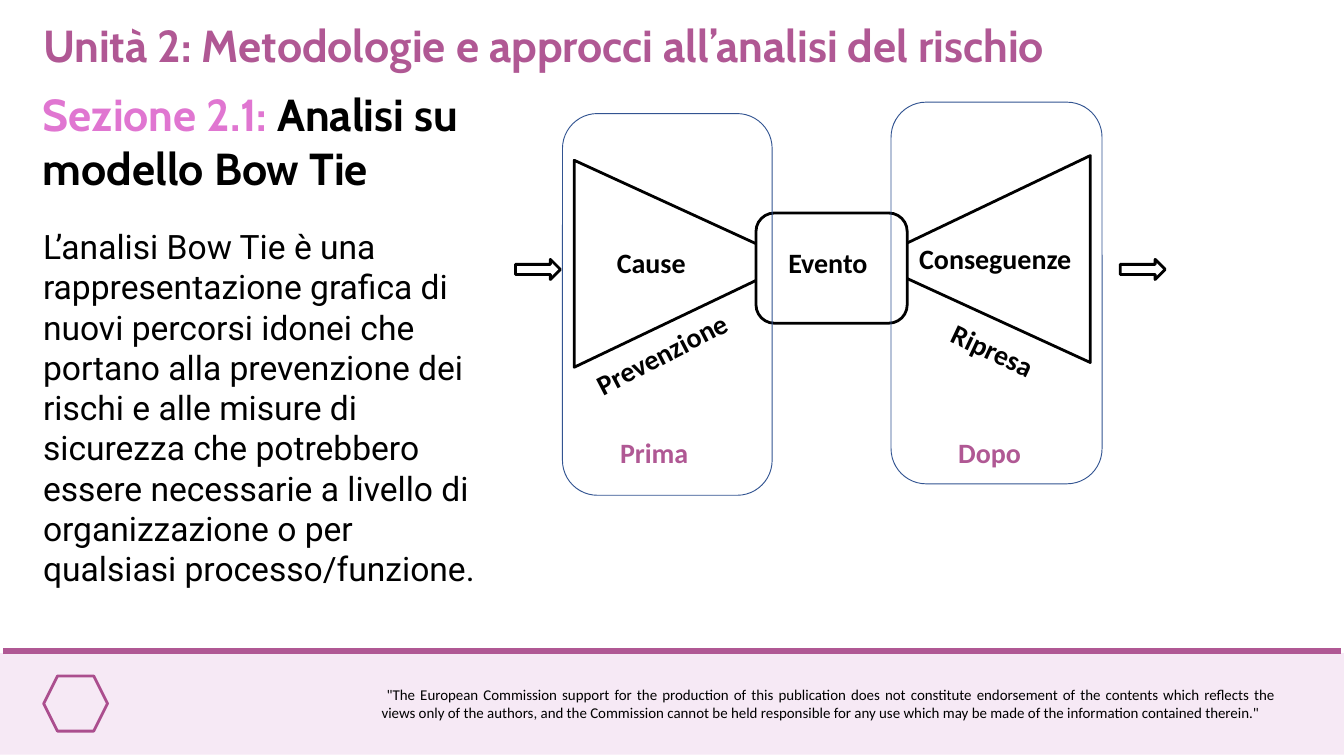
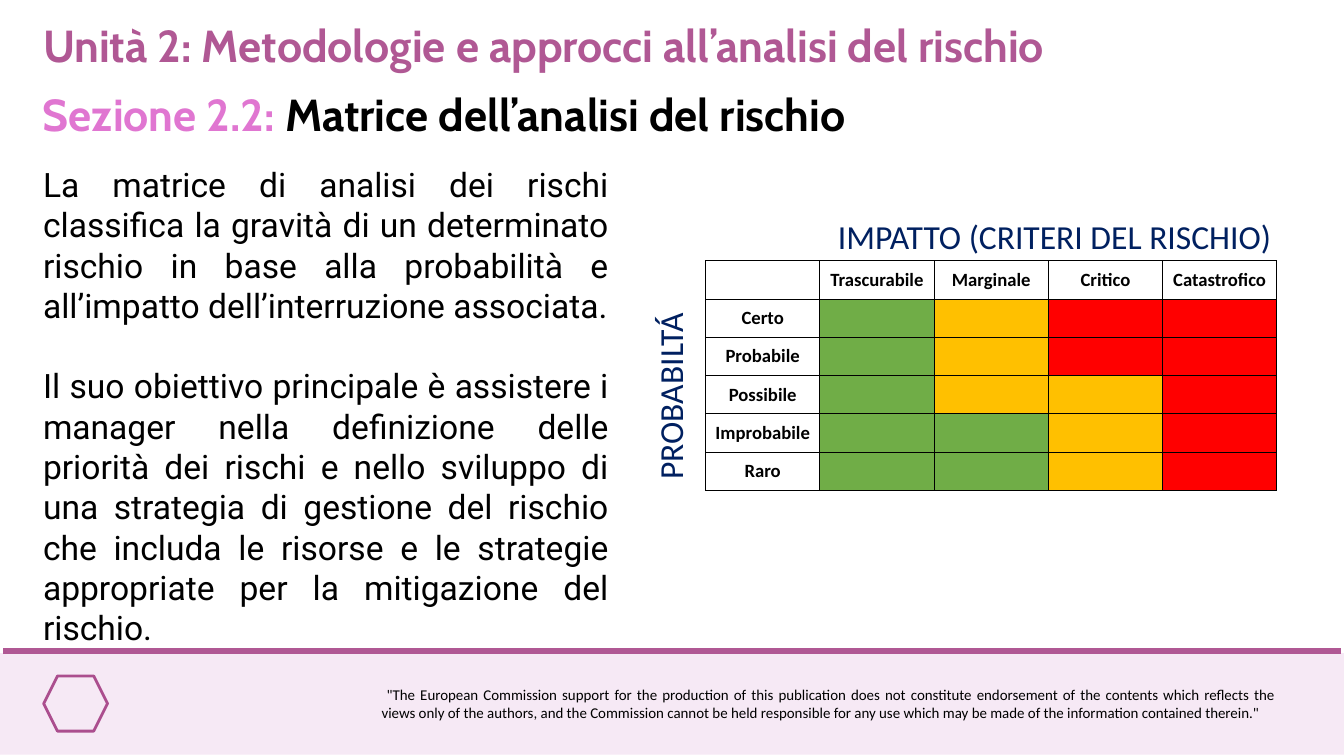
import pptx
import pptx.dml.color
import pptx.enum.shapes
import pptx.enum.text
import pptx.oxml
import pptx.oxml.ns
import pptx.util

PX = 9144  # EMU in one px, 100 px to the inch

COLORS = {
    "plum": "B05894", "pink": "E076D1", "band": "F6E9F5", "emblem": "AB4E8E",
    "black": "000000", "white": "FFFFFF", "frame": "325491", "navy": "002060",
    "low": "70AD47", "medium": "FFC000", "high": "FF0000",
}
UNIT = "Unità 2: Metodologie e approcci all’analisi del rischio"
DISCLAIMER = (
    " \"The European Commission support for the production of this publication "
    "does not constitute endorsement of the contents which reflects the views only "
    "of the authors, and the Commission cannot be held responsible for any use "
    "which may be made of the information contained therein.\""
)

SHAPE = pptx.enum.shapes.MSO_SHAPE
ALIGN = pptx.enum.text.PP_ALIGN
ANCHOR = pptx.enum.text.MSO_ANCHOR


def rgb(name):
    return pptx.dml.color.RGBColor.from_string(COLORS[name])


def sub(parent, tag, **attrs):
    el = pptx.oxml.parse_xml(f"<{tag} {pptx.oxml.ns.nsdecls('a')}/>")
    for key, value in attrs.items():
        el.set(key, str(value))
    parent.append(el)
    return el


class Deck:
    def __init__(self):
        self.prs = pptx.Presentation()
        self.prs.slide_width = 2000 * PX
        self.prs.slide_height = 1125 * PX
        self.s = None

    def place(self, sp, box, rot=0):
        sp.left, sp.top, sp.width, sp.height = (v * PX for v in box)
        if rot:
            sp.rotation = rot

    def run(self, p, text, size, font="Calibri", color="black", bold=False):
        r = p.add_run()
        r.text = text
        r.font.size = pptx.util.Pt(size)
        r.font.name = font
        r.font.bold = bold
        r.font.color.rgb = rgb(color)

    def frame(self, sp):
        tf = sp.text_frame
        tf.word_wrap = True
        tf.auto_size = pptx.enum.text.MSO_AUTO_SIZE.NONE
        tf.vertical_anchor = ANCHOR.TOP
        return tf

    # Slide with title, section heading and footer
    def slide(self, number, section, heading_box):
        self.s = self.prs.slides.add_slide(self.prs.slide_layouts[1])
        self.footer()
        title = self.s.shapes.title
        self.place(title, (54, 22, 1758, 91))
        p = self.frame(title).paragraphs[0]
        p.alignment = ALIGN.LEFT
        self.run(p, UNIT, 48, "Cabin", "plum", True)
        p = self.text(heading_box, f"Sezione {number}: ", 48, font="Cabin", color="pink", bold=True)
        self.run(p, section, 48, "Cabin", "black", True)

    def footer(self):
        self.shape(SHAPE.RECTANGLE, (0, 972, 2000, 151), fill="band")
        rule = self.s.shapes.add_connector(
            pptx.enum.shapes.MSO_CONNECTOR.STRAIGHT, 5 * PX, 969 * PX, 1995 * PX, 969 * PX)
        rule.line.color.rgb = rgb("plum")
        rule.line.width = pptx.util.Pt(6.75)
        sub(rule._element.spPr, "a:effectLst")
        self.shape(SHAPE.HEXAGON, (65, 1006, 95, 82), line="emblem", width=3)
        self.text((558, 1015, 1350, 64), DISCLAIMER, 16, align=ALIGN.JUSTIFY)

    def body(self, box, paragraphs, align=ALIGN.LEFT):
        sp = self.s.placeholders[1]
        self.place(sp, box)
        tf = self.frame(sp)
        for i, text in enumerate(paragraphs):
            p = tf.add_paragraph() if i else tf.paragraphs[0]
            pPr = p._p.get_or_add_pPr()
            pPr.set("marL", "0")
            pPr.set("indent", "0")
            sub(pPr, "a:buNone")
            p.alignment = align
            p.space_before = pptx.util.Pt(43 if i else 0)
            self.run(p, text, 36, "Roboto")

    def text(self, box, text, size, align=ALIGN.LEFT, rot=0, **style):
        sp = self.s.shapes.add_textbox(0, 0, 0, 0)
        self.place(sp, box, rot)
        p = self.frame(sp).paragraphs[0]
        p.alignment = align
        self.run(p, text, size, **style)
        return p

    def shape(self, kind, box, fill=None, line=None, width=1, rot=0):
        sp = self.s.shapes.add_shape(kind, 0, 0, 0, 0)
        self.place(sp, box, rot)
        sp.shadow.inherit = False
        if fill:
            sp.fill.solid()
            sp.fill.fore_color.rgb = rgb(fill)
        else:
            sp.fill.background()
        if line:
            sp.line.color.rgb = rgb(line)
            sp.line.width = pptx.util.Pt(width)
        else:
            sp.line.fill.background()
        return sp

    def cell(self, cell, text="", fill="white"):
        tcPr = cell._tc.get_or_add_tcPr()
        for side in ("lnL", "lnR", "lnT", "lnB"):
            ln = sub(tcPr, f"a:{side}", w=12700)
            sub(sub(ln, "a:solidFill"), "a:srgbClr", val=COLORS["black"])
        cell.fill.solid()
        cell.fill.fore_color.rgb = rgb(fill)
        cell.vertical_anchor = ANCHOR.MIDDLE
        if text:
            p = cell.text_frame.paragraphs[0]
            p.alignment = ALIGN.CENTER
            self.run(p, text, 20, bold=True)

    def matrix(self, left, top, col_width, row_height, impacts, levels):
        rows, cols = len(levels) + 1, len(impacts) + 1
        table = self.s.shapes.add_table(
            rows, cols, left * PX, top * PX,
            cols * col_width * PX, rows * row_height * PX).table
        table.first_row = table.horz_banding = False
        for col in table.columns:
            col.width = col_width * PX
        for row in table.rows:
            row.height = row_height * PX
        for c, impact in enumerate([""] + impacts):
            self.cell(table.cell(0, c), impact)
        grades = {"L": "low", "M": "medium", "H": "high"}
        for r, (name, risks) in enumerate(levels.items(), 1):
            self.cell(table.cell(r, 0), name)
            for c, risk in enumerate(risks, 1):
                self.cell(table.cell(r, c), fill=grades[risk])


def bow_tie(deck):
    deck.slide("2.1", "Analisi su modello Bow Tie", (54, 124, 804, 172))
    deck.body((54, 331, 668, 555), [
        "L’analisi Bow Tie è una rappresentazione grafica di nuovi percorsi idonei "
        "che portano alla prevenzione dei rischi e alle misure di sicurezza che "
        "potrebbero essere necessarie a livello di organizzazione o per qualsiasi "
        "processo/funzione."])

    # Bow tie and arrows
    solid = dict(fill="white", line="black", width=3)
    for left, top, rot in ((865, 228, 90), (1304, 221, 270)):
        wing = deck.shape(SHAPE.ISOSCELES_TRIANGLE, (left, top, 308, 329), rot=rot, **solid)
        wing.adjustments[0] = 0.49
    deck.shape(SHAPE.ROUNDED_RECTANGLE, (1125, 317, 225, 164), **solid)
    for left in (767, 1667):
        deck.shape(SHAPE.RIGHT_ARROW, (left, 386, 67, 30), **solid)

    # Labels
    for text, box, align, rot, color in (
        ("Cause", (908, 360, 158, 61), ALIGN.LEFT, 0, "black"),
        ("Conseguenze", (1358, 355, 299, 61), ALIGN.LEFT, 0, "black"),
        ("Evento", (1153, 360, 158, 61), ALIGN.CENTER, 0, "black"),
        ("Prevenzione", (855, 496, 259, 61), ALIGN.CENTER, 332.6, "black"),
        ("Ripresa", (1369, 491, 216, 61), ALIGN.CENTER, 25.2, "black"),
        ("Prima", (844, 643, 259, 61), ALIGN.CENTER, 0, "plum"),
        ("Dopo", (1343, 643, 259, 61), ALIGN.CENTER, 0, "plum"),
    ):
        deck.text(box, text, 30, align, rot, color=color, bold=True)

    # Before and after frames
    for box in ((837, 169, 312, 568), (1326, 152, 314, 568)):
        deck.shape(SHAPE.ROUNDED_RECTANGLE, box, line="frame")


def risk_matrix(deck):
    deck.slide("2.2", "Matrice dell’analisi del rischio", (54, 124, 1487, 91))
    deck.body((54, 239, 862, 737), [
        "La matrice di analisi dei rischi classifica la gravità di un determinato "
        "rischio in base alla probabilità e all’impatto dell’interruzione associata.",
        "Il suo obiettivo principale è assistere i manager nella definizione delle "
        "priorità dei rischi e nello sviluppo di una strategia di gestione del rischio "
        "che includa le risorse e le strategie appropriate per la mitigazione del "
        "rischio."], ALIGN.JUSTIFY)

    # Axis names and matrix
    deck.text((1237, 317, 705, 71), "IMPATTO (CRITERI DEL RISCHIO)", 36, color="navy")
    deck.text((850, 541, 294, 71), "PROBABILTÁ", 36, rot=270, color="navy")
    deck.matrix(
        1050, 388, 170, 57,
        ["Trascurabile", "Marginale", "Critico", "Catastrofico"],
        {"Certo": "LMHH", "Probabile": "LMHH", "Possibile": "LMMH",
         "Improbabile": "LLMH", "Raro": "LLMH"})


def main():
    deck = Deck()
    bow_tie(deck)
    risk_matrix(deck)
    deck.prs.save("out.pptx")


if __name__ == "__main__":
    main()
